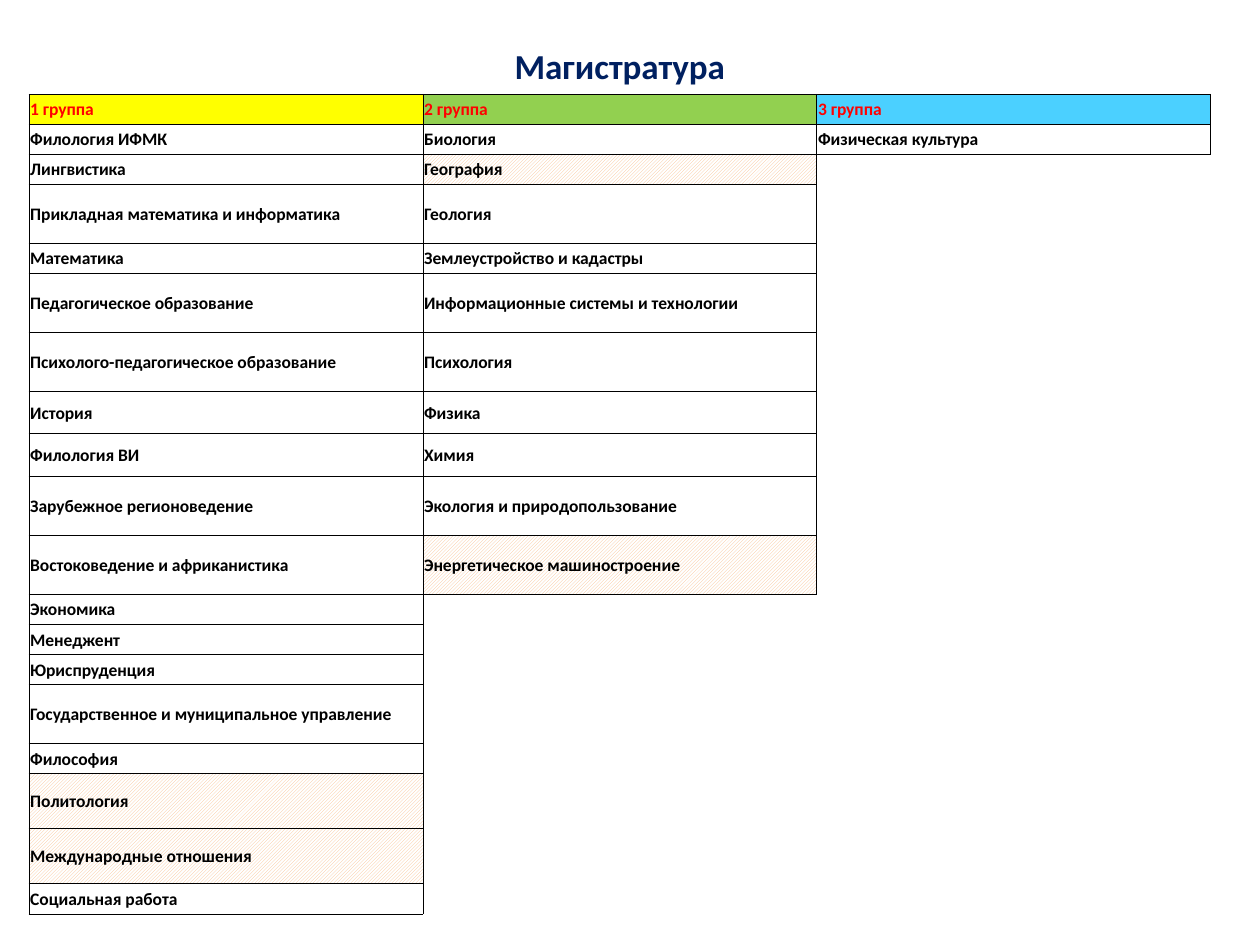
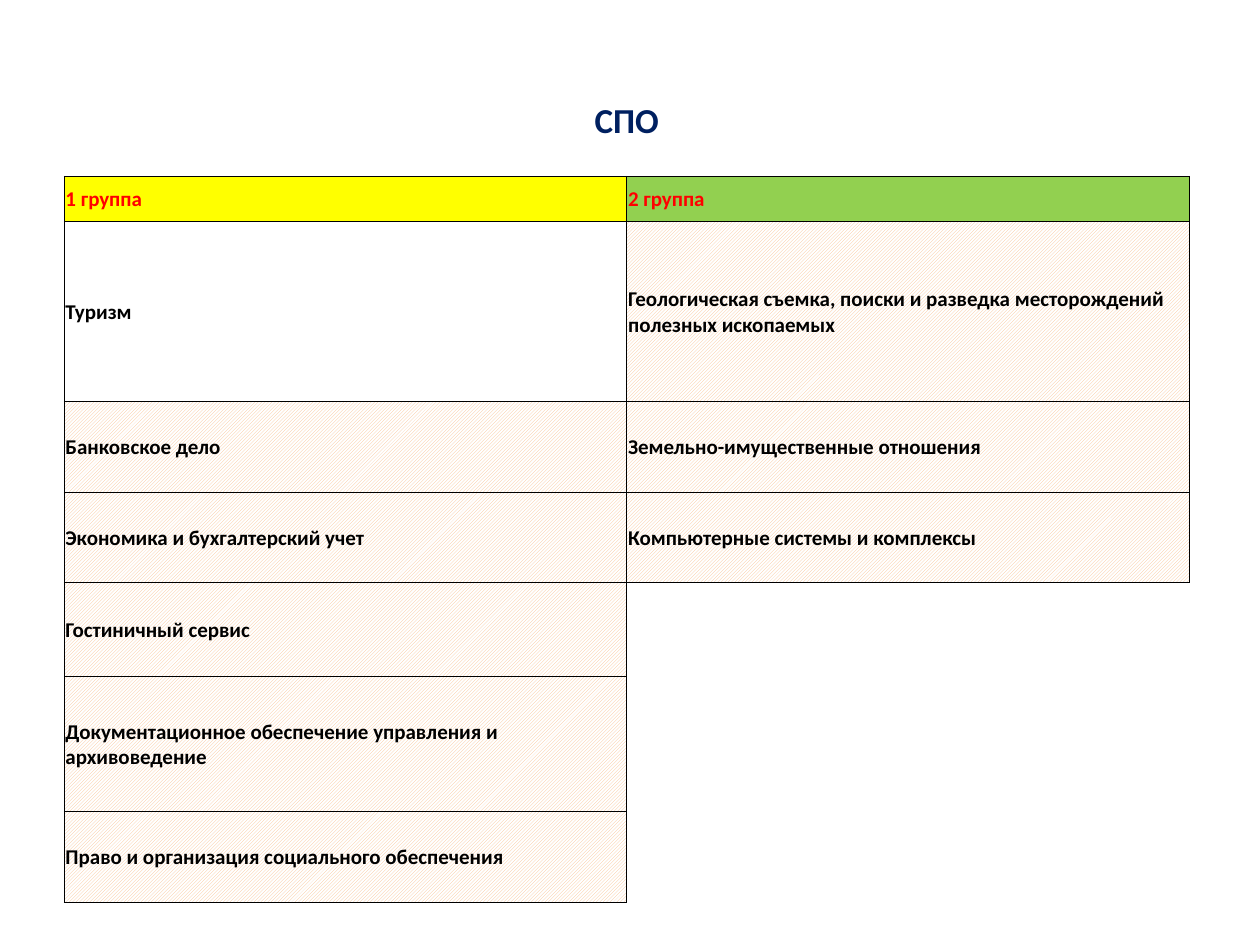
from itertools import zip_longest

from lxml import etree
from pptx import Presentation
from pptx.dml.color import RGBColor
from pptx.enum.dml import MSO_PATTERN
from pptx.enum.text import MSO_ANCHOR, PP_ALIGN
from pptx.oxml.ns import qn
from pptx.util import Inches, Pt

MIDDLE, CENTER = MSO_ANCHOR.MIDDLE, PP_ALIGN.CENTER
HATCH = MSO_PATTERN.LIGHT_UPWARD_DIAGONAL
NAVY = RGBColor(0x00, 0x20, 0x60)
RED = RGBColor(0xFF, 0x00, 0x00)
BLACK = RGBColor(0x00, 0x00, 0x00)
WHITE = RGBColor(0xFF, 0xFF, 0xFF)
PEACH = RGBColor(0xFA, 0xC0, 0x90)
HEADS = [  # group colours: yellow, green, blue
    RGBColor(0xFF, 0xFF, 0x00),
    RGBColor(0x92, 0xD0, 0x50),
    RGBColor(0x4B, 0xD0, 0xFF),
]
FONT = "Calibri"
PLAIN = "{2D5ABB26-0587-4C30-8999-92F81FD0307C}"  # table style without grid
SIDES = {"lnL": (0, -1), "lnR": (0, 1), "lnT": (-1, 0), "lnB": (1, 0)}

# Content: one list of subjects per group; hatched subjects are named apart
MASTERS = {
    "title": "Магистратура",
    "groups": [
        ["Филология ИФМК", "Лингвистика", "Прикладная математика и информатика",
         "Математика", "Педагогическое образование",
         "Психолого-педагогическое образование", "История", "Филология ВИ",
         "Зарубежное регионоведение", "Востоковедение и африканистика",
         "Экономика", "Менеджент", "Юриспруденция",
         "Государственное и муниципальное управление", "Философия",
         "Политология", "Международные отношения", "Социальная работа"],
        ["Биология", "География", "Геология", "Землеустройство и кадастры",
         "Информационные системы и технологии", "Психология", "Физика", "Химия",
         "Экология и природопользование", "Энергетическое машиностроение"],
        ["Физическая культура"],
    ],
    "hatched": {"География", "Энергетическое машиностроение", "Политология",
                "Международные отношения"},
    "size": 10,
    "box": (0.23, 0.31, 9.38, 6.95),
    "rows": [0.44, 0.24, 0.24, 0.24, 0.47, 0.24, 0.47, 0.47, 0.34, 0.34,
             0.47, 0.47, 0.24, 0.24, 0.24, 0.47, 0.24, 0.44, 0.44, 0.24],
}
COLLEGE = {
    "title": "СПО",
    "groups": [
        ["Туризм", "Банковское дело", "Экономика и бухгалтерский учет",
         "Гостиничный сервис",
         "Документационное обеспечение управления и архивоведение",
         "Право и организация социального обеспечения"],
        ["Геологическая съемка, поиски и разведка месторождений полезных ископаемых",
         "Земельно-имущественные отношения", "Компьютерные системы и комплексы"],
    ],
    "size": 12,
    "box": (0.51, 0.52, 8.93, 6.64),
    "rows": [0.88, 0.36, 1.43, 0.72, 0.72, 0.75, 1.07, 0.72],
}
COLLEGE["hatched"] = set(sum(COLLEGE["groups"], [])) - {"Туризм"}


def write(cell, text, size, color, align=None):
    cell.vertical_anchor = MIDDLE
    cell.margin_left = cell.margin_right = cell.margin_top = Inches(0.01)
    cell.margin_bottom = 0
    para = cell.text_frame.paragraphs[0]
    if not text:  # keep empty cells from stretching their row
        etree.SubElement(para._p, qn("a:endParaRPr"), sz=str(size * 100))
        return
    if align is not None:
        para.alignment = align
    run = para.add_run()
    run.text = text
    font = run.font
    font.name, font.size, font.bold = FONT, Pt(size), True
    font.color.rgb = color


def paint(cell, color=None, hatched=False):
    fill = cell.fill
    if hatched:
        fill.patterned()
        fill.pattern = HATCH
        fill.fore_color.rgb, fill.back_color.rgb = PEACH, WHITE
    elif color is not None:
        fill.solid()
        fill.fore_color.rgb = color
    else:
        fill.background()


def border(cell, drawn):
    props = cell._tc.get_or_add_tcPr()
    for spot, side in enumerate(SIDES):
        line = etree.Element(qn("a:" + side), w=str(Pt(0.5)))
        if side in drawn:
            solid = etree.SubElement(line, qn("a:solidFill"))
            etree.SubElement(solid, qn("a:srgbClr"), val=str(BLACK))
        else:
            etree.SubElement(line, qn("a:noFill"))
        props.insert(spot, line)


def build(deck, data):
    slide = deck.slides.add_slide(deck.slide_layouts[6])
    groups, size = data["groups"], data["size"]
    count = len(groups)
    heads = [f"{n} группа" for n in range(1, count + 1)]
    grid = [[data["title"]] + [""] * (count - 1), heads]
    grid += zip_longest(*groups, fillvalue="")

    # Table frame, with equal columns and rows scaled to the full height
    left, top, width, height = data["box"]
    frame = slide.shapes.add_table(len(grid), count, Inches(left), Inches(top),
                                   Inches(width), Inches(height))
    table = frame.table
    table.first_row = table.horz_banding = False
    table._tbl.tblPr.find(qn("a:tableStyleId")).text = PLAIN
    for col in table.columns:
        col.width = Inches(width / count)
    scale = height / sum(data["rows"])
    for row, part in zip(table.rows, data["rows"]):
        row.height = Inches(part * scale)

    # An edge is drawn when a filled cell below the title lies on either side
    boxed = {(r, c) for r, row in enumerate(grid)
             for c, text in enumerate(row) if r and text}
    for r, row in enumerate(grid):
        for c, text in enumerate(row):
            cell = table.cell(r, c)
            if r == 0:
                write(cell, text, 20, NAVY, CENTER)
            else:
                write(cell, text, size, RED if r == 1 else BLACK)
            paint(cell, HEADS[c] if r == 1 else None, text in data["hatched"])
            border(cell, {side for side, (down, right) in SIDES.items()
                          if {(r, c), (r + down, c + right)} & boxed})
    table.cell(0, 0).merge(table.cell(0, count - 1))


def main():
    deck = Presentation()
    deck.slide_width, deck.slide_height = Inches(10), Inches(7.5)
    for data in (MASTERS, COLLEGE):
        build(deck, data)
    deck.save("out.pptx")


if __name__ == "__main__":
    main()
